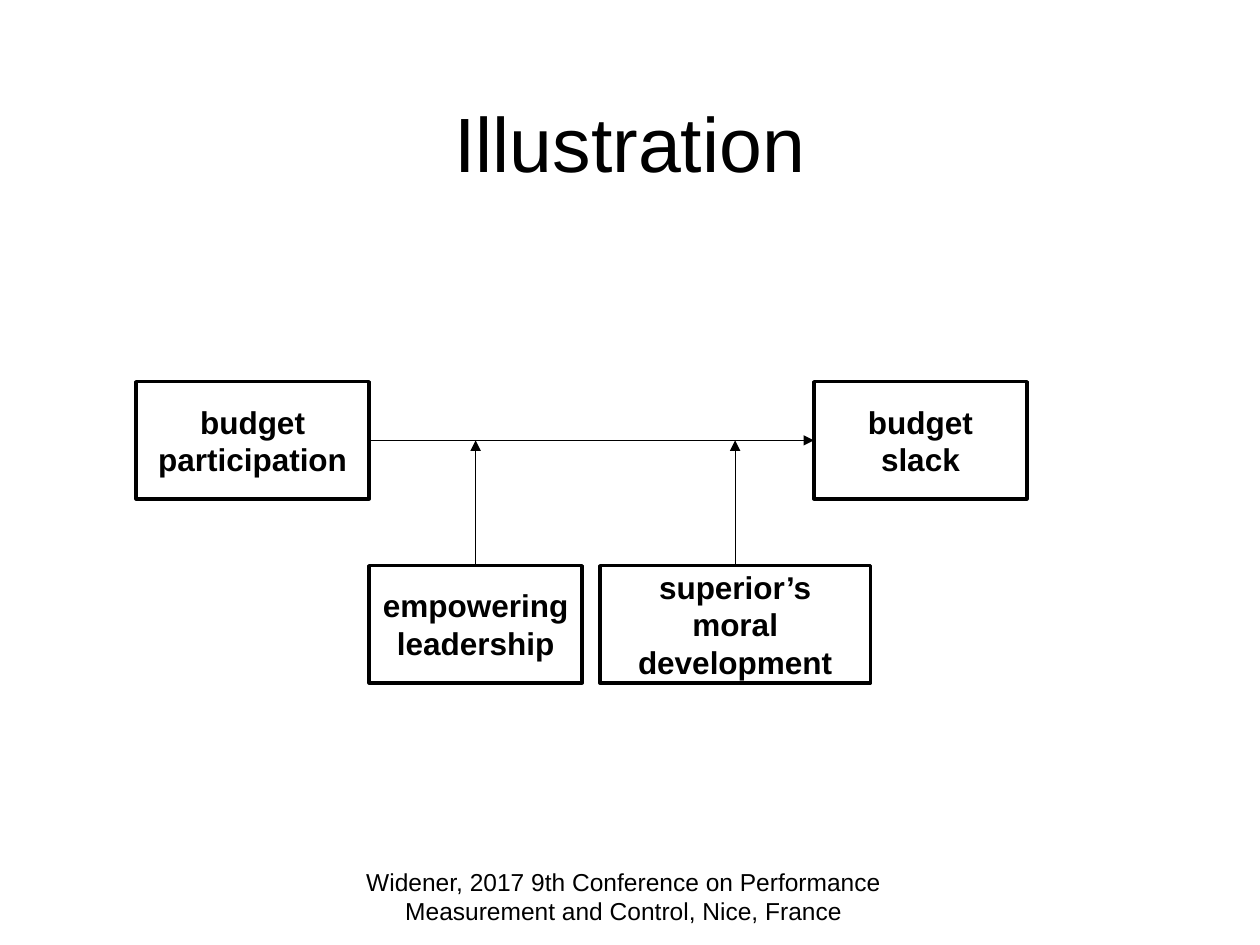
"""Build a slide showing a budgeting model with two moderators."""
from dataclasses import dataclass

from lxml.etree import SubElement
from pptx import Presentation
from pptx.dml.color import RGBColor
from pptx.enum.shapes import MSO_CONNECTOR as CONN, MSO_SHAPE as SHAPE
from pptx.enum.text import MSO_ANCHOR as ANCHOR, PP_ALIGN as ALIGN
from pptx.oxml.ns import qn
from pptx.util import Inches, Pt


@dataclass(frozen=True)
class Theme:
    font: str = "Arial"
    ink: RGBColor = RGBColor(0, 0, 0)
    title: int = 44
    label: int = 18
    footer: int = 14
    border: float = 2
    arrow: float = 0.75


THEME = Theme()
BOX_H = 0.93
TOP_Y, LOW_Y = 3.03, 4.49


def write(tf, lines, size, bold=False, anchor=ANCHOR.MIDDLE):
    tf.word_wrap = True
    tf.vertical_anchor = anchor
    for i, line in enumerate(lines):
        p = tf.paragraphs[0] if i == 0 else tf.add_paragraph()
        p.text = line
        p.alignment = ALIGN.CENTER
        p.font.name = THEME.font
        p.font.size = Pt(size)
        p.font.bold = bold
        p.font.color.rgb = THEME.ink


def add_text(s, x, y, w, h, text, size, anchor):
    sp = s.shapes.add_textbox(Inches(x), Inches(y), Inches(w), Inches(h))
    write(sp.text_frame, [text], size, anchor=anchor)


def add_box(s, x, y, w, *lines):
    sp = s.shapes.add_shape(SHAPE.RECTANGLE, Inches(x), Inches(y), Inches(w), Inches(BOX_H))
    sp.shadow.inherit = False
    sp.fill.background()
    sp.line.color.rgb = THEME.ink
    sp.line.width = Pt(THEME.border)
    write(sp.text_frame, lines, THEME.label, bold=True)
    return sp


def add_arrow(s, x1, y1, x2, y2):
    c = s.shapes.add_connector(CONN.STRAIGHT, x1, y1, x2, y2)
    c.line.color.rgb = THEME.ink
    c.line.width = Pt(THEME.arrow)
    SubElement(c.line._get_or_add_ln(), qn("a:tailEnd"), type="triangle")
    SubElement(c._element.spPr, qn("a:effectLst"))
    return c


def main():
    prs = Presentation()
    prs.slide_width, prs.slide_height = Inches(10), Inches(7.5)
    s = prs.slides.add_slide(prs.slide_layouts[6])

    cause = add_box(s, 1.08, TOP_Y, 1.85, "budget", "participation")
    effect = add_box(s, 6.46, TOP_Y, 1.69, "budget", "slack")
    moderators = [
        add_box(s, 2.93, LOW_Y, 1.69, "empowering", "leadership"),
        add_box(s, 4.76, LOW_Y, 2.15, "superior’s", "moral", "development"),
    ]

    mid_y = cause.top + cause.height // 2
    main_arrow = add_arrow(s, cause.left + cause.width, mid_y, effect.left, mid_y)
    main_arrow.begin_connect(cause, 3)
    main_arrow.end_connect(effect, 1)
    for box in moderators:
        x = box.left + box.width // 2
        add_arrow(s, x, box.top, x, mid_y).begin_connect(box, 0)

    add_text(s, 0.5, 0.5, 9, 1.25, "Illustration", THEME.title, ANCHOR.MIDDLE)
    add_text(s, 2.75, 6.83, 4.4, 0.52,
             "Widener, 2017 9th Conference on Performance Measurement and Control, Nice, France",
             THEME.footer, ANCHOR.TOP)
    prs.save("out.pptx")


if __name__ == "__main__":
    main()
